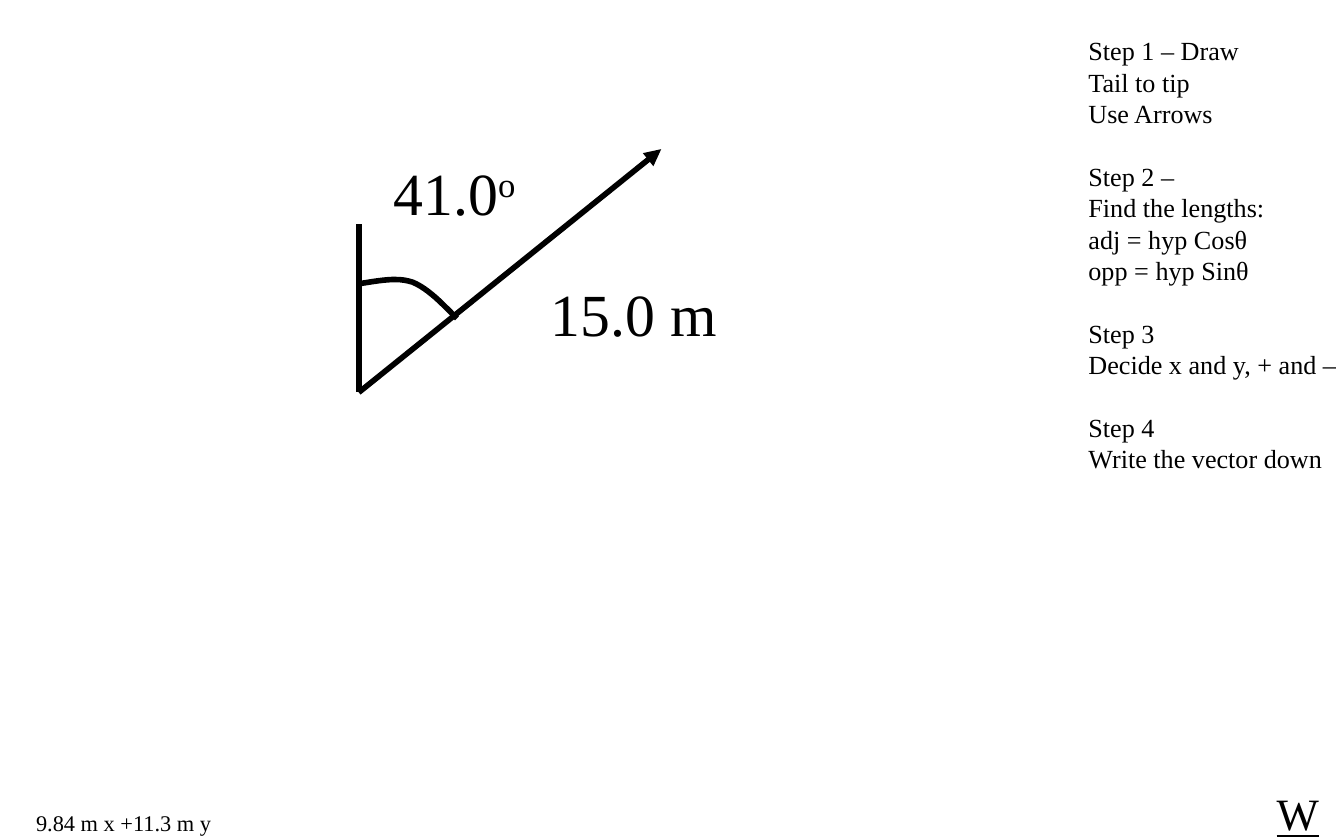
from lxml import etree
from pptx import Presentation
from pptx.dml.color import RGBColor
from pptx.enum.shapes import MSO_CONNECTOR
from pptx.oxml.ns import qn
from pptx.util import Emu, Pt

STRAIGHT = MSO_CONNECTOR.STRAIGHT
PX = 9144
FONT = "Times New Roman"
COLORS = {"ink": "000000", "paper": "FFFFFF"}
LINE_WIDTH = 3
STEP_GAP = 16.8
CURVE_PARTS = 12

LABELS = [
    ((17, 597, 153, 30), 12, [("9.84 m x +11.3 m y", "plain")]),
    ((940, 580, 52, 50), 24, [("W", "underline")]),
    ((400, 201, 145, 64), 32, [("15.0 m", "plain")]),
    ((283, 111, 114, 64), 32, [("41.0", "plain"), ("o", "super")]),
]
STEPS_BOX = (800, 21, 208, 364)
STEPS_SIZE = 14
STEPS = [
    ["Step 1 – Draw", "Tail to tip", "Use Arrows"],
    ["Step 2 –", "Find the lengths:", "adj = hyp Cosθ", "opp = hyp Sinθ"],
    ["Step 3", "Decide x and y, + and –"],
    ["Step 4", "Write the vector down"],
]
ORIGIN = (267, 292)
AXIS_TOP = (267, 167)
VECTOR_TIP = (492, 111)
ANGLE_ARC = [
    [(340, 237), (329, 226), (319, 215), (307, 210)],
    [(307, 210), (295, 206), (282, 209), (268, 211)],
]


def px(*values):
    return [Emu(round(v * PX)) for v in values]


def color(name):
    return RGBColor.from_string(COLORS[name])


def add_box(slide, box):
    tf = slide.shapes.add_textbox(*px(*box)).text_frame
    tf.word_wrap = False
    return tf


def add_run(p, text, size, style="plain"):
    r = p.add_run()
    r.text = text
    r.font.name = FONT
    r.font.size = Pt(size)
    r.font.color.rgb = color("ink")
    if style == "underline":
        r.font.underline = True
    elif style == "super":
        r.font._element.set("baseline", "30000")


def style_line(line):
    line.color.rgb = color("ink")
    line.width = Pt(LINE_WIDTH)


def add_line(slide, start, end, arrow=False):
    c = slide.shapes.add_connector(STRAIGHT, *px(*start, *end))
    style_line(c.line)
    if arrow:
        etree.SubElement(c.line._get_or_add_ln(), qn("a:tailEnd"), type="triangle")
    etree.SubElement(c._element.spPr, qn("a:effectLst"))


def bezier(points, t):
    weights = ((1 - t) ** 3, 3 * t * (1 - t) ** 2, 3 * t * t * (1 - t), t ** 3)
    return tuple(sum(w * pt[i] for w, pt in zip(weights, points)) for i in (0, 1))


def add_arc(slide, curves):
    points = [px(*bezier(curve, n / CURVE_PARTS))
              for curve in curves for n in range(1, CURVE_PARTS + 1)]
    builder = slide.shapes.build_freeform(*px(*curves[0][0]))
    builder.add_line_segments(points, close=False)
    sp = builder.convert_to_shape()
    sp.shadow.inherit = False
    sp.fill.background()
    style_line(sp.line)


def add_steps(slide):
    tf = add_box(slide, STEPS_BOX)
    p = tf.paragraphs[0]
    for i, step in enumerate(STEPS):
        for j, text in enumerate(step):
            if i or j:
                p = tf.add_paragraph()
            if i and not j:
                p.space_before = Pt(STEP_GAP)
            add_run(p, text, STEPS_SIZE)


def main():
    prs = Presentation()
    prs.slide_width, prs.slide_height = px(1000, 625)
    slide = prs.slides.add_slide(prs.slide_layouts[6])
    slide.background.fill.solid()
    slide.background.fill.fore_color.rgb = color("paper")
    for box, size, runs in LABELS:
        p = add_box(slide, box).paragraphs[0]
        for text, style in runs:
            add_run(p, text, size, style)
    add_line(slide, AXIS_TOP, ORIGIN)
    add_line(slide, ORIGIN, VECTOR_TIP, arrow=True)
    add_arc(slide, ANGLE_ARC)
    add_steps(slide)
    prs.save("out.pptx")


if __name__ == "__main__":
    main()
